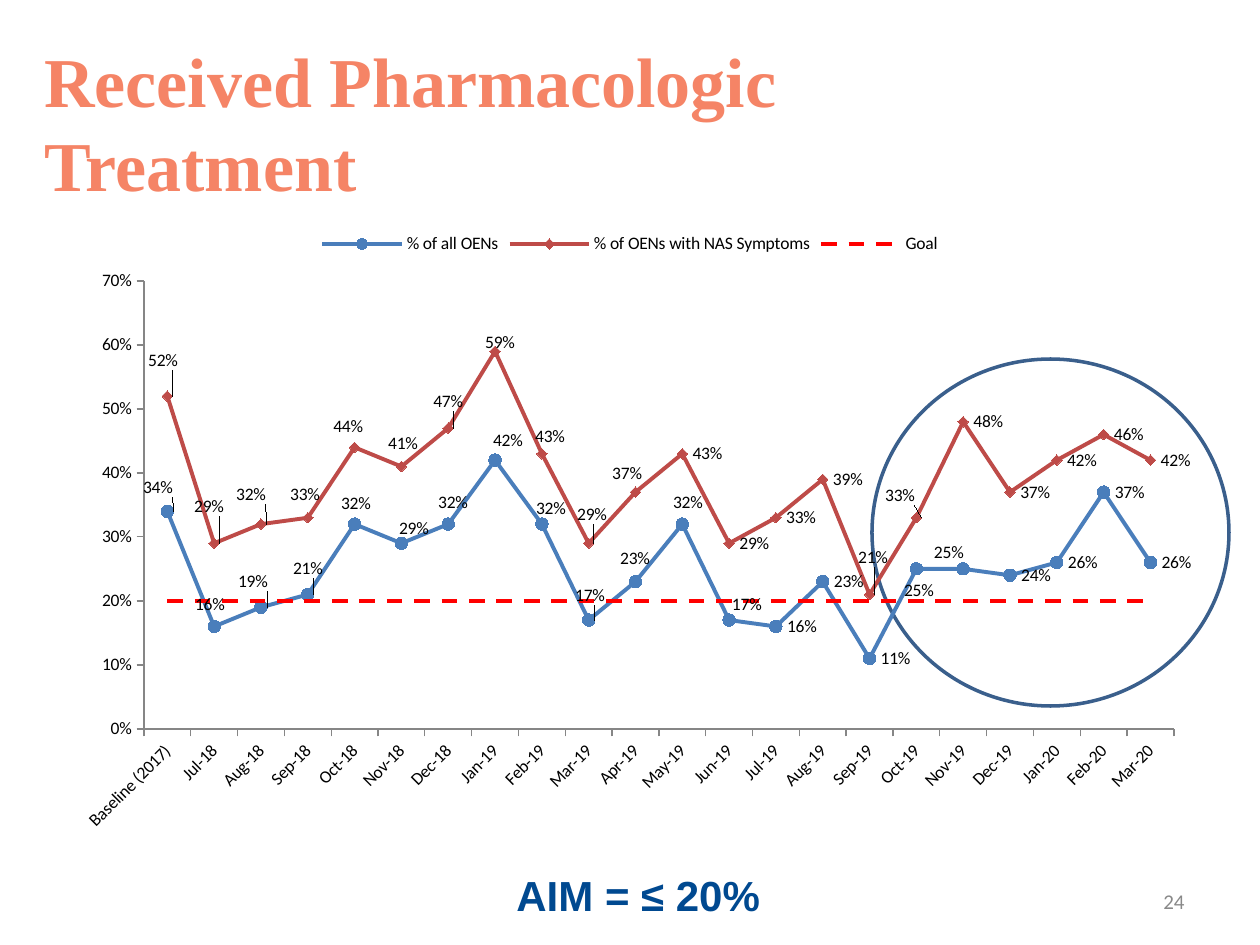
import pptx
import pptx.util
import pptx.chart.data
import pptx.dml.color
import pptx.enum.chart
import pptx.enum.dml
import pptx.enum.shapes
import pptx.enum.text
import pptx.oxml
import pptx.oxml.ns
from dataclasses import dataclass


@dataclass(frozen=True)
class Theme:
    title: str = "F58466"
    aim: str = "004990"
    page: str = "898989"
    ring: str = "3A5F8C"
    ink: str = "000000"
    axis: str = "868686"
    all_oens: str = "4A7EBB"
    nas_oens: str = "BE4B48"
    goal: str = "FF0000"
    title_size: int = 40
    aim_size: int = 24
    page_size: int = 12
    chart_size: int = 10
    line_width: float = 2.25
    ring_width: int = 2


THEME = Theme()
SLIDE = (1260, 945)
PLOT = (81, 61, 1030, 448)
TOP_RATE = 0.7
LABEL_GAP = 25
CHART_NS = pptx.oxml.ns.nsdecls("c", "a")

MONTHS = ["Baseline (2017)"]
MONTHS += [f"{month}-18" for month in "Jul Aug Sep Oct Nov Dec".split()]
MONTHS += [f"{month}-19" for month in
           "Jan Feb Mar Apr May Jun Jul Aug Sep Oct Nov Dec".split()]
MONTHS += [f"{month}-20" for month in "Jan Feb Mar".split()]

ALL_OENS = [34, 16, 19, 21, 32, 29, 32, 42, 32, 17, 23,
            32, 17, 16, 23, 11, 25, 25, 24, 26, 37, 26]
NAS_OENS = [52, 29, 32, 33, 44, 41, 47, 59, 43, 29, 37,
            43, 29, 33, 39, 21, 33, 48, 37, 42, 46, 42]
GOAL = [20] * len(MONTHS)

ALL_LABELS = {
    0: (94, 268), 1: (146, 385), 2: (189, 362), 3: (244, 349), 4: (292, 284),
    5: (350, 309), 6: (389, 283), 7: (444, 221), 8: (487, 289), 9: (526, 376),
    10: (571, 339), 11: (624, 283), 12: (683, 385), 16: (855, 371), 17: (885, 333)}
NAS_LABELS = {
    0: (100, 141), 1: (146, 287), 2: (188, 275), 3: (242, 275), 4: (285, 207),
    5: (340, 224), 6: (385, 182), 7: (437, 123), 8: (487, 217), 9: (529, 295),
    10: (564, 254), 15: (810, 338), 16: (837, 276)}


def px(length):
    return round(length * pptx.util.Inches(1) / 126)


def rgb(code):
    return pptx.dml.color.RGBColor.from_string(code)


def assign(target, values):
    for name, value in values.items():
        setattr(target, name, value)


def style_line(line, color, width, dash=None):
    line.color.rgb = rgb(color)
    assign(line, {"width": pptx.util.Pt(width), "dash_style": dash})


def add_text(slide, box, words, font, color, align="LEFT", anchor="MIDDLE"):
    frame = slide.shapes.add_textbox(*map(px, box)).text_frame
    assign(frame, {"word_wrap": True,
                   "vertical_anchor": getattr(pptx.enum.text.MSO_ANCHOR, anchor)})
    paragraph = frame.paragraphs[0]
    paragraph.alignment = getattr(pptx.enum.text.PP_ALIGN, align)
    run = paragraph.add_run()
    run.text = words
    assign(run.font, font)
    run.font.color.rgb = rgb(color)


def add_title(slide, box):
    add_text(slide, box, "Received Pharmacologic Treatment",
             {"name": "Times New Roman", "size": pptx.util.Pt(THEME.title_size),
              "bold": True}, THEME.title)


def add_footer(slide, box):
    left, top, width, height = box
    add_text(slide, (left + 400, top + 13, width - 400, 50), "24",
             {"name": "Calibri", "size": pptx.util.Pt(THEME.page_size)},
             THEME.page, "RIGHT")
    add_text(slide, (left, top, 310, height), "AIM = ≤ 20%",
             {"name": "Arial", "size": pptx.util.Pt(THEME.aim_size), "bold": True},
             THEME.aim, anchor="TOP")


def add_ring(slide, box):
    ring = slide.shapes.add_shape(pptx.enum.shapes.MSO_SHAPE.OVAL, *map(px, box))
    ring.shadow.inherit = False
    ring.fill.background()
    style_line(ring.line, THEME.ring, THEME.ring_width)


def manual_layout(values):
    parts = "".join(f'<c:{name} val="{value}"/>' for name, value in values.items())
    return pptx.oxml.parse_xml(
        f"<c:layout {CHART_NS}><c:manualLayout>{parts}</c:manualLayout></c:layout>")


def no_fill():
    return pptx.oxml.parse_xml(
        f"<c:spPr {CHART_NS}><a:noFill/><a:ln><a:noFill/></a:ln></c:spPr>")


def place_plot(chart, box):
    left, top, width, height = PLOT
    area = chart._chartSpace.chart.plotArea
    for old in area.findall(pptx.oxml.ns.qn("c:layout")):
        area.remove(old)
    area.insert(0, manual_layout({
        "layoutTarget": "inner", "xMode": "edge", "yMode": "edge",
        "x": round(left / box[2], 4), "y": round(top / box[3], 4),
        "w": round(width / box[2], 4), "h": round(height / box[3], 4)}))
    area.append(no_fill())
    chart._chartSpace.chart.addnext(no_fill())


def style_axes(chart):
    marks = pptx.enum.chart.XL_TICK_MARK
    for axis in (chart.category_axis, chart.value_axis):
        assign(axis, {"has_major_gridlines": False, "major_tick_mark": marks.OUTSIDE,
                      "minor_tick_mark": marks.NONE})
        style_line(axis.format.line, THEME.axis, 0.75)
        axis.tick_labels.font.size = pptx.util.Pt(THEME.chart_size)
    assign(chart.value_axis, {"minimum_scale": 0, "maximum_scale": TOP_RATE,
                              "major_unit": 0.1})
    assign(chart.value_axis.tick_labels, {"number_format": "0%",
                                          "number_format_is_linked": False})
    body = chart.category_axis._element.find(".//" + pptx.oxml.ns.qn("a:bodyPr"))
    body.set("rot", str(-45 * 60000))


def label_points(series, rates, centres, box):
    right = pptx.enum.chart.XL_LABEL_POSITION.RIGHT
    assign(series.data_labels, {"show_value": True, "number_format": "0%",
                                "number_format_is_linked": False, "position": right})
    for index in centres:
        series.points[index].data_label.position = right
    left, top, width, height = PLOT
    labels = series._element.xpath("c:dLbls/c:dLbl")
    for label, (index, (x, y)) in zip(labels, centres.items()):
        point_x = left + width * (index + 0.5) / len(rates)
        point_y = top + height * (1 - rates[index] / 100 / TOP_RATE)
        label.find(pptx.oxml.ns.qn("c:idx")).addnext(manual_layout({
            "x": round((x - point_x - LABEL_GAP) / box[2], 4),
            "y": round((y - point_y) / box[3], 4)}))


def add_rates_chart(slide, box):
    markers = pptx.enum.chart.XL_MARKER_STYLE
    plan = [
        ("% of all OENs", ALL_OENS, THEME.all_oens, markers.CIRCLE, 7, None, ALL_LABELS),
        ("% of OENs with NAS Symptoms", NAS_OENS, THEME.nas_oens, markers.DIAMOND, 6,
         None, NAS_LABELS),
        ("Goal", GOAL, THEME.goal, markers.NONE, 5, pptx.enum.dml.MSO_LINE.DASH, None)]
    data = pptx.chart.data.CategoryChartData(number_format="0%")
    data.categories = MONTHS
    for name, rates, *_ in plan:
        data.add_series(name, [rate / 100 for rate in rates])
    chart = slide.shapes.add_chart(pptx.enum.chart.XL_CHART_TYPE.LINE_MARKERS,
                                   *map(px, box), data).chart
    assign(chart, {"has_title": False, "has_legend": True})
    assign(chart.font, {"name": "Calibri", "size": pptx.util.Pt(THEME.chart_size)})
    chart.font.color.rgb = rgb(THEME.ink)
    assign(chart.legend, {"position": pptx.enum.chart.XL_LEGEND_POSITION.TOP,
                          "include_in_layout": False})
    chart.plots[0].vary_by_categories = False
    style_axes(chart)
    place_plot(chart, box)
    for series, (_, rates, color, marker, size, dash, centres) in zip(
            chart.plots[0].series, plan):
        series.smooth = False
        style_line(series.format.line, color, THEME.line_width, dash)
        assign(series.marker, {"style": marker, "size": size})
        if centres:
            series.marker.format.fill.solid()
            series.marker.format.fill.fore_color.rgb = rgb(color)
            style_line(series.marker.format.line, color, 0.75)
            label_points(series, rates, centres, box)


def main():
    deck = pptx.Presentation()
    assign(deck, {"slide_width": px(SLIDE[0]), "slide_height": px(SLIDE[1])})
    slide = deck.slides.add_slide(deck.slide_layouts[6])
    add_title(slide, (32, 42, 998, 158))
    add_footer(slide, (504, 863, 693, 63))
    add_ring(slide, (872, 359, 357, 347))
    add_rates_chart(slide, (63, 220, 1134, 624))
    deck.save("out.pptx")


if __name__ == "__main__":
    main()
